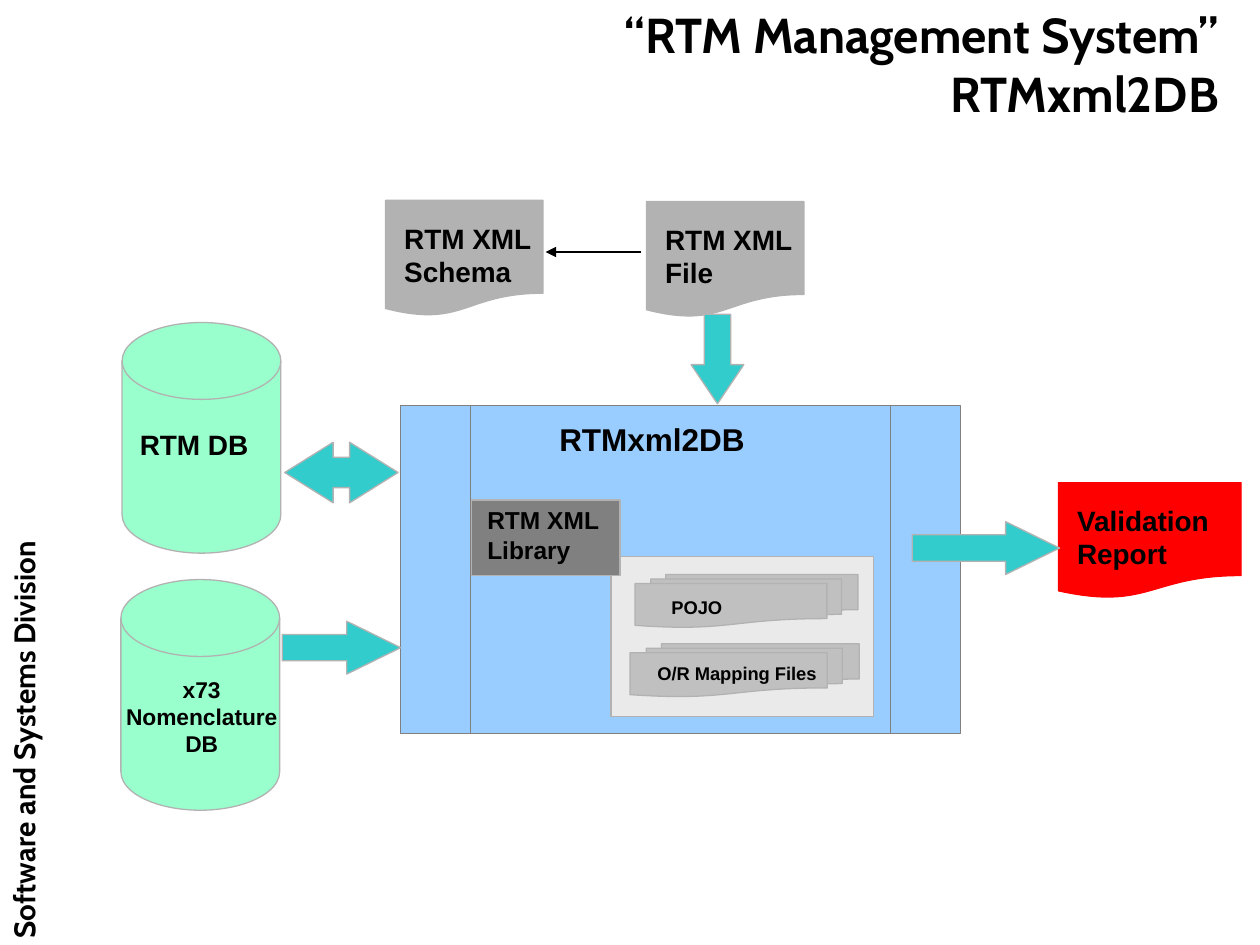
from dataclasses import dataclass

from lxml import etree
from pptx import Presentation
from pptx import util as u
from pptx.dml.color import RGBColor
from pptx.enum import shapes, text
from pptx.oxml import ns

Pt = u.Pt
Kind = shapes.MSO_SHAPE
Align = text.PP_ALIGN


@dataclass(frozen=True)
class Theme:
    ink: str = "000000"
    edge: str = "B2B2B2"
    dark: str = "808080"
    red: str = "FF0000"
    teal: str = "33CCCC"
    mint: str = "99FFCC"
    blue: str = "99CCFF"
    panel: str = "EAEAEA"
    file: str = "C0C0C0"
    sans: str = "Arial"
    head: str = "Cabin"
    title: float = 28
    name: float = 18
    side: float = 17
    label: float = 16
    inner: float = 14
    store: float = 13
    small: float = 10.5
    rule: float = 0.75


T = Theme()


def apply(item, vals):
    for key, val in vals.items():
        setattr(item, key, val)


def color(code):
    return RGBColor.from_string(code)


def write(slide, words, box, size, face=T.sans, align=Align.LEFT, pad=(7.2, 3.6),
          anchor=text.MSO_ANCHOR.TOP, turn=0):
    note = slide.shapes.add_textbox(*map(Pt, box))
    note.rotation = turn
    side, top = map(Pt, pad)
    frame = note.text_frame
    apply(frame, {"word_wrap": True, "vertical_anchor": anchor,
                  "margin_left": side, "margin_right": side,
                  "margin_top": top, "margin_bottom": top})
    para = frame.paragraphs[0]
    apply(para, {"text": words, "alignment": align})
    for run in para.runs:
        apply(run.font, {"name": face, "size": Pt(size), "bold": True})
        run.font.color.rgb = color(T.ink)


def draw(slide, kind, box, fill, line=T.edge, adjust=()):
    form = slide.shapes.add_shape(kind, *map(Pt, box))
    form.shadow.inherit = False
    form.fill.solid()
    form.fill.fore_color.rgb = color(fill)
    form.line.color.rgb = color(line)
    form.line.width = Pt(T.rule)
    for i, val in enumerate(adjust):
        form.adjustments[i] = val


def sheet(slide, words, left, top, width, fill):
    draw(slide, Kind.FLOWCHART_DOCUMENT, (left, top, width, 66.2), fill, fill)
    write(slide, words, (left + 3.6, top + 8.3, width - 1.4, 46), T.label)


def disk(slide, left, top):
    draw(slide, Kind.FLOWCHART_MAGNETIC_DISK, (left, top, 90.7, 131.8), T.mint)


def link(slide, start, end):
    line = slide.shapes.add_connector(
        shapes.MSO_CONNECTOR.STRAIGHT, *map(Pt, start + end))
    line.line.color.rgb = color(T.ink)
    line.line.width = Pt(T.rule)
    tip = etree.SubElement(line.line._get_or_add_ln(), ns.qn("a:tailEnd"))
    tip.set("type", "triangle")
    etree.SubElement(line._element.spPr, ns.qn("a:effectLst"))


def heads(slide):
    write(slide, "Software and Systems Division", (-236.2, 280.1, 499, 27.4),
          T.side, T.head, turn=270)
    write(slide, "“RTM Management System”\vRTMxml2DB", (133.9, 10.1, 569.5, 52.6),
          T.title, T.head, Align.RIGHT, anchor=text.MSO_ANCHOR.MIDDLE)


def sheets(slide):
    sheet(slide, "RTM XML File", 369.4, 115.2, 90, T.edge)
    sheet(slide, "RTM XML Schema", 220.3, 114.5, 90, T.edge)
    sheet(slide, "Validation Report", 604.8, 275.8, 104.4, T.red)
    link(slide, (366.5, 144), (311.8, 144))


def engine(slide):
    draw(slide, Kind.FLOWCHART_PREDEFINED_PROCESS, (229, 231.8, 319.7, 187.2),
         T.blue, T.dark)
    write(slide, "RTMxml2DB", (312.5, 236.2, 195, 33.8), T.name)
    draw(slide, Kind.RECTANGLE, (349.2, 318.2, 149.8, 91.4), T.panel)
    for words, pile, spot in (
        ("POJO", (362.9, 328.3, 127.4, 30.2), (376.6, 337)),
        ("O/R Mapping Files", (360, 367.9, 131, 30.2), (368.6, 375.1)),
    ):
        draw(slide, Kind.FLOWCHART_MULTIDOCUMENT, pile, T.file)
        write(slide, words, spot + (115, 20), T.small)
    draw(slide, Kind.FLOWCHART_PROCESS, (269.3, 285.8, 85, 43.2), T.dark)
    write(slide, "RTM XML Library", (271.4, 285.1, 89.3, 48.2), T.inner)


def stores(slide):
    disk(slide, 69.1, 331.2)
    write(slide, "x73 Nomenclature DB", (63.4, 385.9, 103.7, 38.9), T.store,
          align=Align.CENTER, pad=(0, 0))
    disk(slide, 69.8, 184.3)
    write(slide, "RTM DB", (79.9, 244.1, 94.3, 23), T.label, pad=(0, 0))


def arrows(slide):
    for kind, box, head in (
        (Kind.DOWN_ARROW, (394.9, 179.6, 30.2, 51.1), 0.74),
        (Kind.RIGHT_ARROW, (521.3, 298.1, 84.2, 30.2), 1.02),
        (Kind.LEFT_RIGHT_ARROW, (162.7, 252.7, 64.8, 34.6), 0.8),
        (Kind.RIGHT_ARROW, (161.3, 355, 67.7, 30.2), 1.02),
    ):
        draw(slide, kind, box, T.teal, adjust=(0.5, head))


def main():
    deck = Presentation()
    apply(deck, {"slide_width": Pt(720), "slide_height": Pt(540)})
    slide = deck.slides.add_slide(deck.slide_layouts[6])
    for build in (heads, sheets, engine, stores, arrows):
        build(slide)
    deck.save("out.pptx")


if __name__ == "__main__":
    main()
